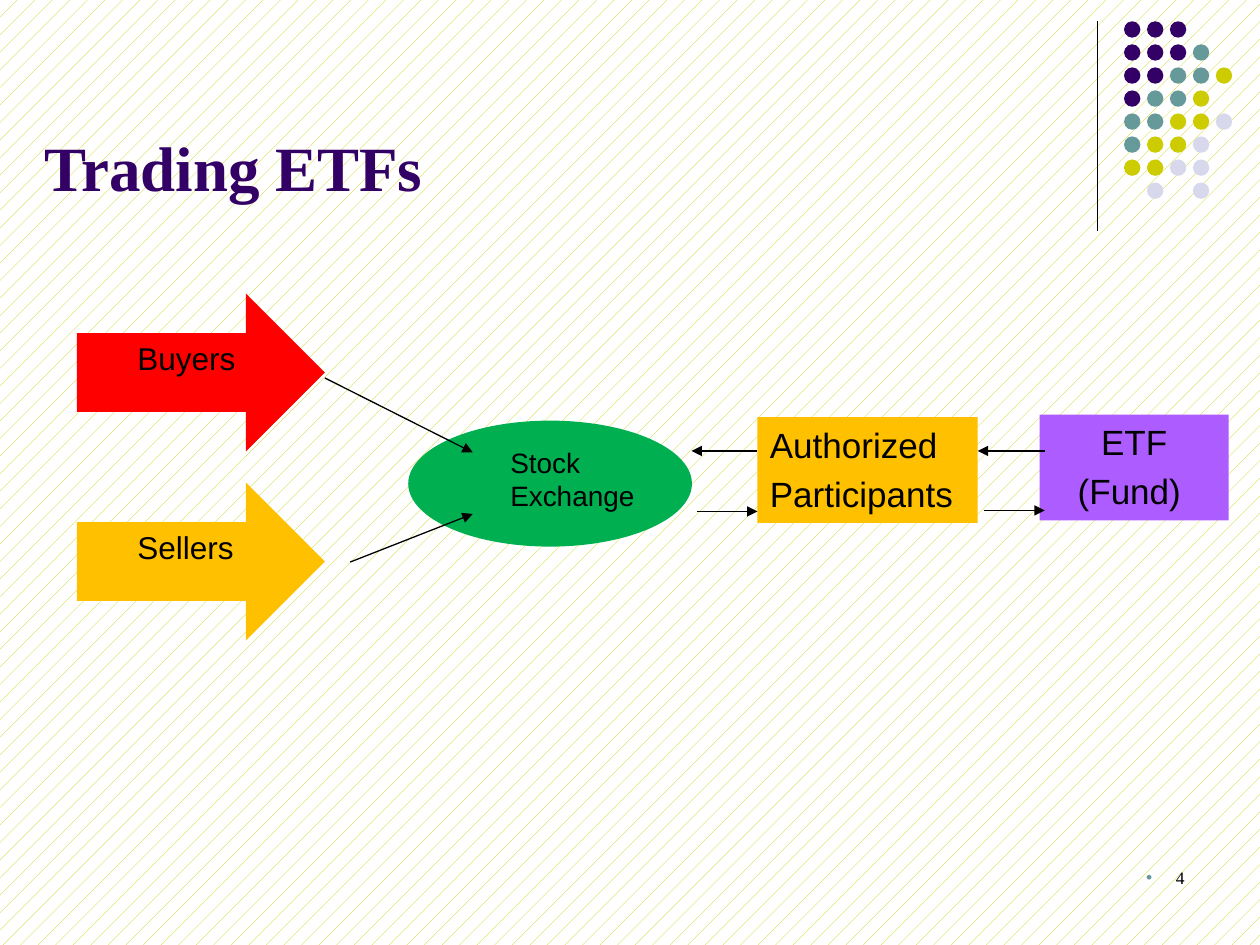
from collections import namedtuple

from lxml.etree import SubElement
from pptx import Presentation
from pptx.dml.color import RGBColor
from pptx.enum.dml import MSO_PATTERN
from pptx.enum.shapes import MSO_CONNECTOR, MSO_SHAPE
from pptx.enum.text import MSO_ANCHOR, PP_ALIGN
from pptx.oxml.ns import qn
from pptx.util import Cm, Pt

BLACK = RGBColor(0x00, 0x00, 0x00)
WHITE = RGBColor(0xFF, 0xFF, 0xFF)
INDIGO = RGBColor(0x33, 0x00, 0x66)
TEAL = RGBColor(0x66, 0x99, 0x99)
OLIVE = RGBColor(0xCC, 0xCC, 0x00)
LAVENDER = RGBColor(0xD8, 0xD8, 0xEC)
RED = RGBColor(0xFF, 0x00, 0x00)
AMBER = RGBColor(0xFF, 0xC0, 0x00)
GREEN = RGBColor(0x00, 0xB0, 0x50)
PURPLE = RGBColor(0xAD, 0x5C, 0xFF)

DOT_COLORS = {"I": INDIGO, "T": TEAL, "O": OLIVE, "L": LAVENDER}
DOT_ROWS = ["III", "IIIT", "IITTO", "ITTO", "TTOOL", "TOOL", "OOLL", ".L.L"]
DOT_SIZE = 0.33

Box = namedtuple("Box", "left top width height")


def style_text(para, font_name, size, color=BLACK, bold=False):
    para.font.name = font_name
    para.font.size = Pt(size)
    para.font.color.rgb = color
    para.font.bold = bold


def indent(para, left, first):
    properties = para._p.get_or_add_pPr()
    properties.set("marL", str(Cm(left)))
    properties.set("indent", str(Cm(first)))
    return properties


def add_filled_shape(page, kind, box, color):
    shape = page.shapes.add_shape(kind, *map(Cm, box))
    shape.shadow.inherit = False
    shape.fill.solid()
    shape.fill.fore_color.rgb = color
    shape.line.fill.background()
    return shape


def add_line(page, start, end, arrow=True):
    line = page.shapes.add_connector(MSO_CONNECTOR.STRAIGHT, *map(Cm, start + end))
    line.line.color.rgb = BLACK
    line.line.width = Pt(0.75)
    if arrow:
        SubElement(line.line._get_or_add_ln(), qn("a:tailEnd"), type="triangle")
    SubElement(line._element.spPr, qn("a:effectLst"))


def add_text_box(page, box, text):
    frame = page.shapes.add_textbox(*map(Cm, box)).text_frame
    frame.word_wrap = True
    frame.text = text
    return frame


def add_node(page, kind, box, color, text, size, align=PP_ALIGN.LEFT, left_indent=0):
    frame = add_filled_shape(page, kind, box, color).text_frame
    frame.word_wrap = True
    frame.vertical_anchor = MSO_ANCHOR.TOP
    frame.text = text
    for para in frame.paragraphs:
        para.alignment = align
        para.space_before = Pt(size * 0.2)
        indent(para, left_indent, 0)
        style_text(para, "Arial", size)


def add_ornament(page, box):
    add_line(page, (box.left, box.top), (box.left, box.top + 4.22), arrow=False)
    dots_left = box.left + 0.54
    column_step = (box.left + box.width - dots_left - DOT_SIZE) / 4
    row_step = (box.height - DOT_SIZE) / (len(DOT_ROWS) - 1)
    for row, codes in enumerate(DOT_ROWS):
        for column, code in enumerate(codes):
            if code in DOT_COLORS:
                dot = Box(dots_left + column * column_step, box.top + row * row_step,
                          DOT_SIZE, DOT_SIZE)
                add_filled_shape(page, MSO_SHAPE.OVAL, dot, DOT_COLORS[code])


def add_title(page, box):
    frame = add_text_box(page, box, "Trading ETFs")
    frame.vertical_anchor = MSO_ANCHOR.BOTTOM
    style_text(frame.paragraphs[0], "Times New Roman", 36, INDIGO, bold=True)


def add_page_number(page, box):
    para = add_text_box(page, box, "4").paragraphs[0]
    para.alignment = PP_ALIGN.RIGHT
    style_text(para, "Times New Roman", 10)
    properties = indent(para, 0.6, -0.6)
    bullet_color = properties.makeelement(qn("a:buClr"), {})
    SubElement(bullet_color, qn("a:srgbClr"), val=str(TEAL))
    bullet_font = properties.makeelement(qn("a:buFont"), {"typeface": "Arial"})
    bullet = properties.makeelement(qn("a:buChar"), {"char": "•"})
    for position, element in enumerate((bullet_color, bullet_font, bullet)):
        properties.insert(position, element)


def add_trading_flow(page, box):
    def place(left, top, width, height):
        return Box(box.left + left, box.top + top, width, height)

    for top, color, text in ((3.81, AMBER, "Sellers"), (0, RED, "Buyers")):
        add_node(page, MSO_SHAPE.RIGHT_ARROW, place(0, top, 5, 3.18), color, text, 18,
                 left_indent=0.97)
    add_node(page, MSO_SHAPE.OVAL, place(6.68, 2.56, 5.72, 2.54), GREEN,
             "Stock Exchange", 16, left_indent=0.97)
    add_node(page, MSO_SHAPE.RECTANGLE, place(13.72, 2.49, 4.44, 2.13), AMBER,
             "Authorized\nParticipants", 20)
    add_node(page, MSO_SHAPE.RECTANGLE, place(19.41, 2.44, 3.81, 2.13), PURPLE,
             "ETF\n(Fund) ", 20, align=PP_ALIGN.CENTER)

    for x1, y1, x2, y2 in (
        (5, 1.7, 7.98, 3.2),
        (5.51, 5.41, 7.98, 4.44),
        (13.72, 3.17, 12.39, 3.17),
        (12.5, 4.39, 13.72, 4.39),
        (19.51, 3.17, 18.16, 3.17),
        (18.29, 4.37, 19.51, 4.37),
    ):
        add_line(page, (box.left + x1, box.top + y1), (box.left + x2, box.top + y2))


def main():
    deck = Presentation()
    deck.slide_width = Cm(25.4)
    deck.slide_height = Cm(19.05)
    page = deck.slides.add_slide(deck.slide_layouts[6])
    backdrop = page.background.fill
    backdrop.patterned()
    backdrop.pattern = MSO_PATTERN.PERCENT_5
    backdrop.fore_color.rgb = OLIVE
    backdrop.back_color.rgb = WHITE

    add_ornament(page, Box(22.12, 0.43, 2.72, 3.58))
    add_title(page, Box(0.64, 0.64, 21.39, 3.61))
    add_page_number(page, Box(18.21, 17.35, 5.92, 1.27))
    add_trading_flow(page, Box(1.55, 5.92, 23.22, 6.99))
    deck.save("out.pptx")


if __name__ == "__main__":
    main()
